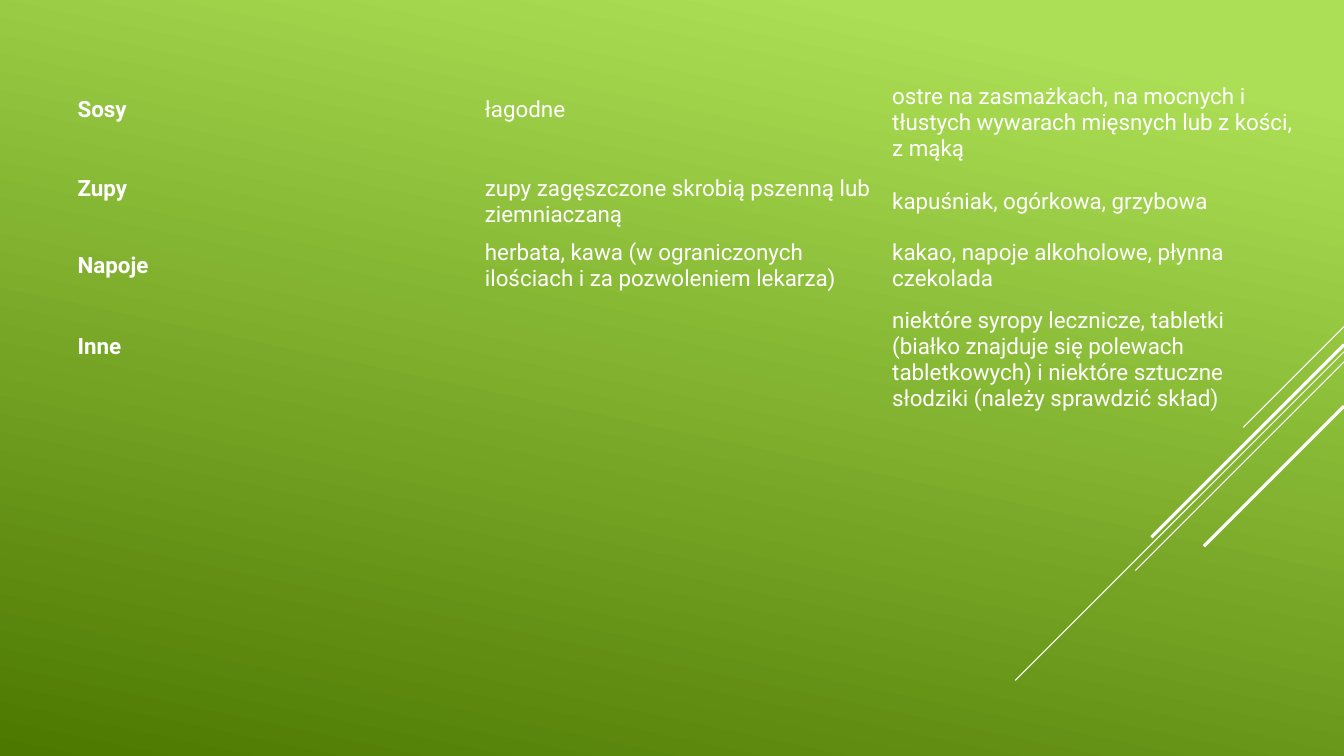
"""Build a slide with a diet table over a green gradient with slanted rays."""
from typing import NamedTuple

from lxml import etree
from pptx import Presentation
from pptx.dml.color import RGBColor
from pptx.enum.shapes import MSO_CONNECTOR
from pptx.enum.text import MSO_ANCHOR
from pptx.oxml.ns import qn
from pptx.slide import Slide
from pptx.table import _Cell
from pptx.util import Inches, Pt

STRAIGHT = MSO_CONNECTOR.STRAIGHT
MIDDLE = MSO_ANCHOR.MIDDLE
WIDE, HIGH = 13.33, 7.5
WHITE = "FFFFFF"
NO_GRID = "{2D5ABB26-0587-4C30-8999-92F81FD0307C}"
LEFT, TOP, COL = 0.75, 0.75, 4.04
LIFT = 0.27
STOPS = ((0.1, "ACDF55"), (1.0, "4C7800"))
FONT = {"name": "Roboto", "size": Pt(16)}
CELL = {
    "vertical_anchor": MIDDLE,
    "margin_left": Inches(0.02),
    "margin_right": Inches(0.02),
    "margin_top": Inches(0.01),
    "margin_bottom": Inches(0.01),
}
FLAGS = {"first_row": False, "horz_banding": False}


class Ray(NamedTuple):
    top: float
    run: float
    weight: float


class Food(NamedTuple):
    high: float
    texts: tuple[str, str, str]
    lifted: tuple[int, ...] = ()


RAYS = (
    Ray(3.24, 1.0, 0.75),
    Ray(3.49, 3.26, 0.75),
    Ray(3.59, 2.07, 0.75),
    Ray(3.42, 1.91, 2.25),
    Ray(4.03, 1.39, 2.25),
)
FOODS = (
    Food(0.94, ("Sosy", "łagodne",
                "ostre na zasmażkach, na mocnych i tłustych wywarach "
                "mięsnych lub z kości, z mąką"), (0, 1)),
    Food(0.63, ("Zupy", "zupy zagęszczone skrobią pszenną lub ziemniaczaną",
                "kapuśniak, ogórkowa, grzybowa"), (0,)),
    Food(0.63, ("Napoje",
                "herbata, kawa (w ograniczonych ilościach i za "
                "pozwoleniem lekarza)",
                "kakao, napoje alkoholowe, płynna czekolada")),
    Food(1.24, ("Inne", "",
                "niektóre syropy lecznicze, tabletki (białko znajduje się "
                "polewach tabletkowych) i niektóre sztuczne słodziki "
                "(należy sprawdzić skład)"), (0,)),
)


def paint(color: str) -> RGBColor:
    """Turn a hex string into a colour."""
    return RGBColor.from_string(color)


def apply(target: object, values: dict) -> None:
    """Set every named value on the target."""
    for name, value in values.items():
        setattr(target, name, value)


def draw_back(slide: Slide) -> None:
    """Fill the background with the gradient."""
    fill = slide.background.fill
    fill.gradient()
    fill.gradient_angle = 360 - 102
    for stop, (place, color) in zip(fill.gradient_stops, STOPS):
        stop.position = place
        stop.color.rgb = paint(color)


def draw_ray(slide: Slide, ray: Ray) -> None:
    """Draw one diagonal from the right edge down to the left."""
    line = slide.shapes.add_connector(
        STRAIGHT, Inches(WIDE), Inches(ray.top),
        Inches(WIDE - ray.run), Inches(ray.top + ray.run))
    line.line.color.rgb = paint(WHITE)
    line.line.width = Pt(ray.weight)
    etree.SubElement(line._element.spPr, qn("a:effectLst"))


def fill_cell(cell: _Cell, text: str, bold: bool, lifted: bool) -> None:
    """Write and format one table cell."""
    cell.fill.background()
    apply(cell, CELL)
    if lifted:
        cell.margin_bottom = Inches(LIFT)
    if text:
        run = cell.text_frame.paragraphs[0].add_run()
        run.text = text
        apply(run.font, FONT | {"bold": bold})
        run.font.color.rgb = paint(WHITE)


def draw_table(slide: Slide, foods: tuple[Food, ...]) -> None:
    """Draw the table of foods."""
    count = len(foods[0].texts)
    frame = slide.shapes.add_table(
        len(foods), count, Inches(LEFT), Inches(TOP),
        Inches(COL * count), Inches(sum(food.high for food in foods)))
    table = frame.table
    apply(table, FLAGS)
    table._tbl.tblPr.find(qn("a:tableStyleId")).text = NO_GRID
    for col in table.columns:
        col.width = Inches(COL)
    for row, food in zip(table.rows, foods):
        row.height = Inches(food.high)
        for i, text in enumerate(food.texts):
            fill_cell(row.cells[i], text, i == 0, i in food.lifted)


def main() -> None:
    """Build and save the deck."""
    deck = Presentation()
    deck.slide_width, deck.slide_height = Inches(WIDE), Inches(HIGH)
    slide = deck.slides.add_slide(deck.slide_layouts[6])
    draw_back(slide)
    for ray in RAYS:
        draw_ray(slide, ray)
    draw_table(slide, FOODS)
    deck.save("out.pptx")


if __name__ == "__main__":
    main()
